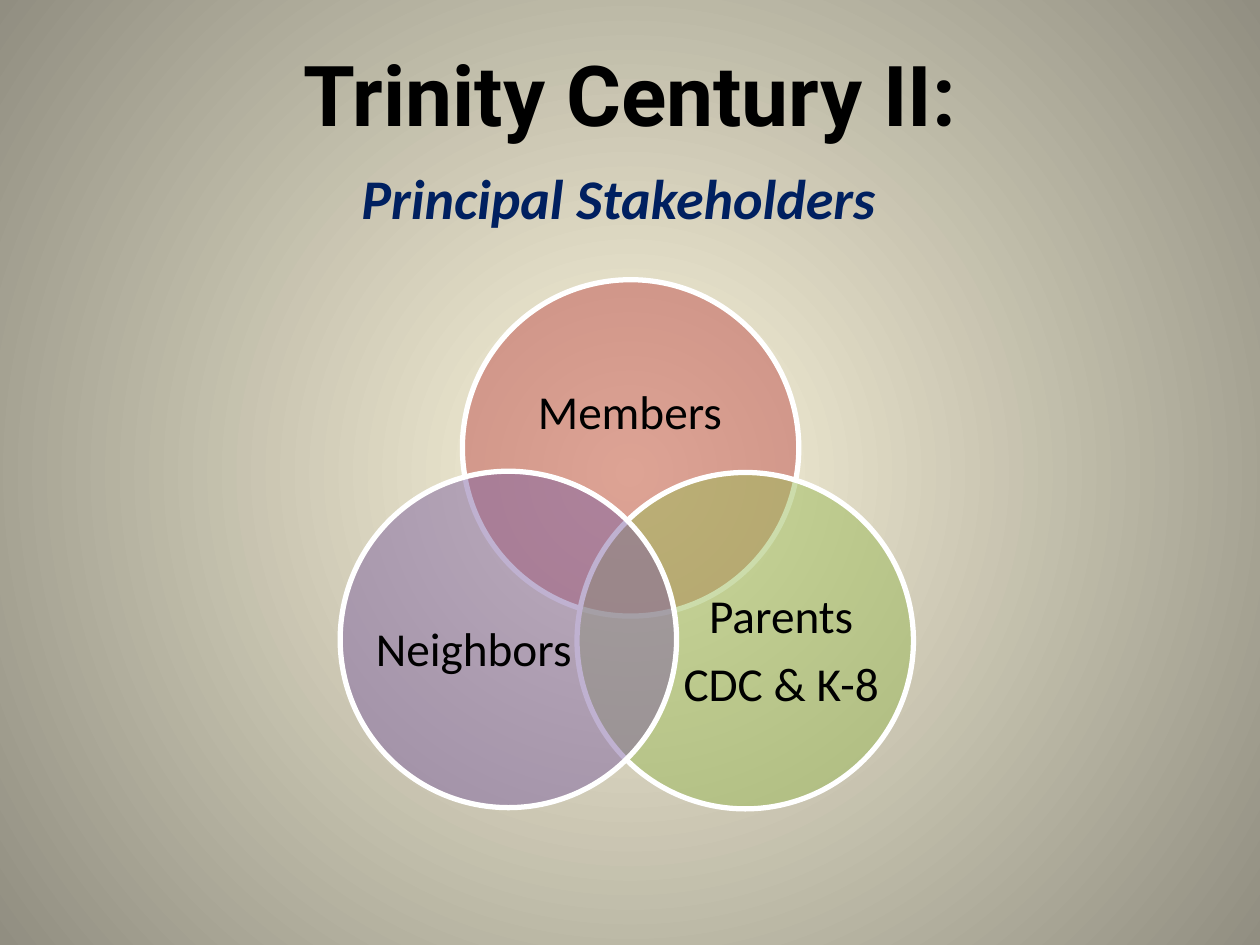
from lxml import etree
from pptx import Presentation
from pptx.dml.color import RGBColor
from pptx.enum.shapes import MSO_SHAPE as Shape
from pptx.enum.text import MSO_ANCHOR as Anchor, PP_ALIGN as Align
from pptx.oxml.ns import qn
from pptx.util import Inches, Pt

COLORS = {
    "center": "FCF7DD",
    "edge": "918E81",
    "text": "000000",
    "subtitle": "002060",
    "outline": "FFFFFF",
    "members": "C0504D",
    "parents": "9BBB59",
    "neighbors": "8064A2",
}
DIAMETER = 2.67

# Circle colour, circle left and top, label lines, label box
STAKEHOLDERS = [
    ("members", (3.67, 2.22), ["Members"], (4.02, 2.69, 1.96, 1.2)),
    ("parents", (4.58, 3.75), ["Parents", "CDC & K-8"], (5.4, 4.44, 1.6, 1.47)),
    ("neighbors", (2.7, 3.74), ["Neighbors"], (2.96, 4.43, 1.6, 1.47)),
]


def rgb(name):
    return RGBColor.from_string(COLORS[name])


def set_background(page):
    """Fill the page with a gradient that spreads in circles from the middle."""
    fill = page.background.fill
    fill.gradient()
    for stop, position, name in zip(fill.gradient_stops, (0, 1), ("center", "edge")):
        stop.position = position
        stop.color.rgb = rgb(name)
    gradient = page.background._cSld.find(".//" + qn("a:gradFill"))
    gradient.remove(gradient.find(qn("a:lin")))
    path = etree.SubElement(gradient, qn("a:path"), path="circle")
    middle = {side: "50000" for side in "ltrb"}
    etree.SubElement(path, qn("a:fillToRect"), middle)


def add_text(page, area, lines, size, font="Calibri", color="text",
             bold=False, italic=False, anchor=Anchor.MIDDLE):
    box = page.shapes.add_textbox(*map(Inches, area))
    frame = box.text_frame
    frame.word_wrap = True
    frame.vertical_anchor = anchor
    frame.text = "\n".join(lines)
    for para in frame.paragraphs:
        para.alignment = Align.CENTER
        for span in para.runs:
            span.font.name = font
            span.font.size = Pt(size)
            span.font.bold = bold
            span.font.italic = italic
            span.font.color.rgb = rgb(color)
    return box


def add_circle(page, position, color):
    """Draw a half-transparent circle with a white outline."""
    circle = page.shapes.add_shape(
        Shape.OVAL, *map(Inches, (*position, DIAMETER, DIAMETER)))
    circle.shadow.inherit = False
    circle.fill.solid()
    circle.fill.fore_color.rgb = rgb(color)
    tint = circle._element.spPr.find(qn("a:solidFill")).find(qn("a:srgbClr"))
    etree.SubElement(tint, qn("a:alpha"), val="50000")
    circle.line.color.rgb = rgb("outline")
    circle.line.width = Pt(3)


def add_label(page, area, lines):
    size = 27
    frame = add_text(page, area, lines, size).text_frame
    frame.margin_left = frame.margin_right = 0
    frame.margin_top = frame.margin_bottom = 0
    for para in frame.paragraphs:
        para.line_spacing = 0.9
        para.space_after = Pt(0.35 * size)


def main():
    deck = Presentation()
    deck.slide_width = Inches(10)
    deck.slide_height = Inches(7.5)
    page = deck.slides.add_slide(deck.slide_layouts[6])
    set_background(page)
    add_text(page, (0.5, 0.3, 9, 0.87), ["Trinity Century II:"], 48,
             font="Roboto", bold=True)
    add_text(page, (0.42, 1.25, 9.08, 5.36), ["Principal Stakeholders "], 32,
             color="subtitle", bold=True, italic=True, anchor=Anchor.TOP)
    for color, position, lines, label_area in STAKEHOLDERS:
        add_circle(page, position, color)
        add_label(page, label_area, lines)
    deck.save("out.pptx")


if __name__ == "__main__":
    main()
